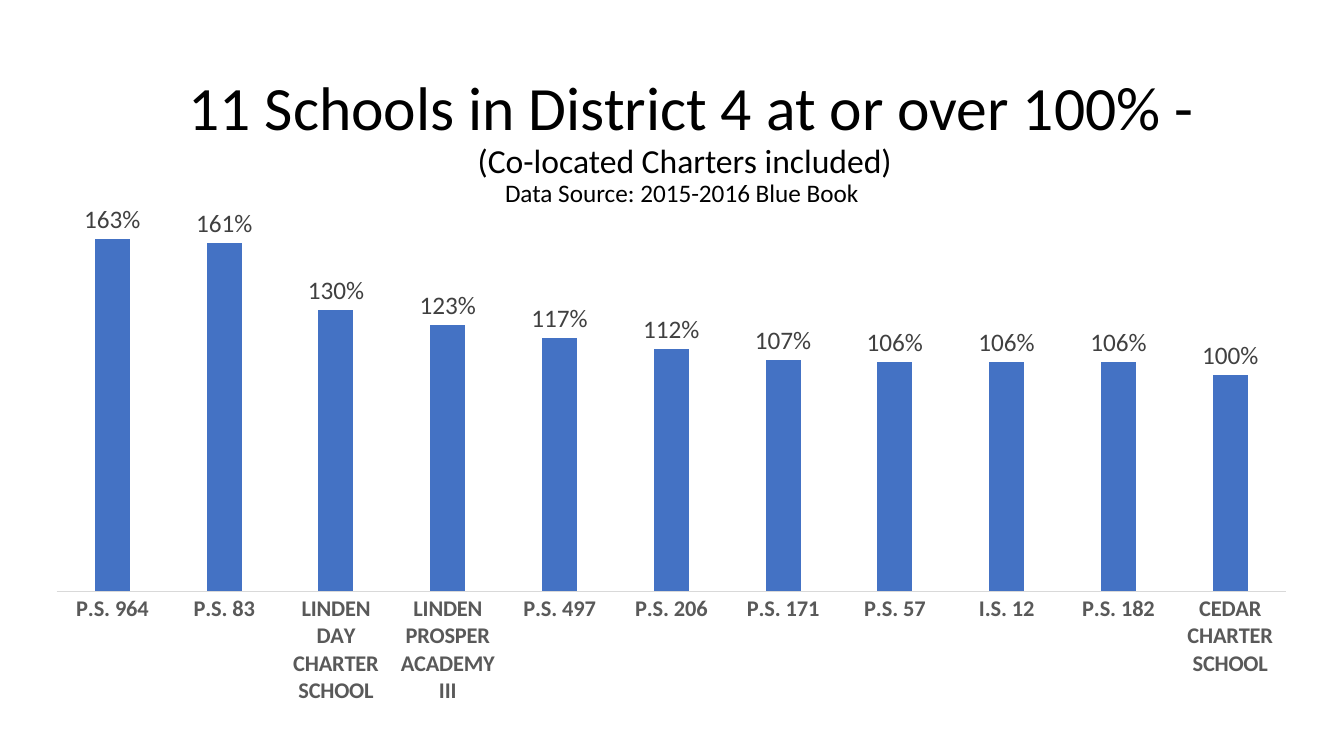
from pptx import Presentation
from pptx.chart.data import CategoryChartData
from pptx.dml.color import RGBColor
from pptx.enum.chart import XL_CHART_TYPE as ChartType
from pptx.enum.chart import XL_LABEL_POSITION as LabelPosition
from pptx.enum.chart import XL_TICK_MARK as TickMark
from pptx.enum.text import MSO_ANCHOR as Anchor
from pptx.enum.text import PP_ALIGN as Align
from pptx.util import Inches, Pt

SLIDE_WIDTH, SLIDE_HEIGHT = Inches(13.33), Inches(7.5)
FONT = "Calibri"
BLACK, BAR_BLUE = "000000", "4472C4"
LABEL_GREY, CATEGORY_GREY, AXIS_GREY = "404040", "595959", "D9D9D9"

HEADING = [
    (" 11 Schools in District 4 at or over 100% -", 44),
    ("(Co-located Charters included)", 24),
    ("Data Source: 2015-2016 Blue Book ", 18),
]
UTILIZATION = {
    "P.S. 964": 1.63,
    "P.S. 83": 1.61,
    "LINDEN DAY CHARTER SCHOOL": 1.3,
    "LINDEN PROSPER ACADEMY III": 1.23,
    "P.S. 497": 1.17,
    "P.S. 206": 1.12,
    "P.S. 171": 1.07,
    "P.S. 57": 1.06,
    "I.S. 12": 1.06,
    "P.S. 182": 1.06,
    "CEDAR CHARTER SCHOOL": 1,
}


def color(hex_value):
    return RGBColor.from_string(hex_value)


def area(left, top, width, height):
    """Turn percentages of the slide's size into lengths."""
    return (int(left * SLIDE_WIDTH / 100), int(top * SLIDE_HEIGHT / 100),
            int(width * SLIDE_WIDTH / 100), int(height * SLIDE_HEIGHT / 100))


def style_font(font, size, hex_value, bold=False):
    font.name = FONT
    font.size = Pt(size)
    font.bold = bold
    font.color.rgb = color(hex_value)


def add_heading(slide, lines, box):
    frame = slide.shapes.add_textbox(*box).text_frame
    frame.word_wrap = True
    frame.vertical_anchor = Anchor.MIDDLE
    paragraph = frame.paragraphs[0]
    paragraph.alignment = Align.CENTER
    paragraph.line_spacing = 0.9
    for index, (text, size) in enumerate(lines):
        if index:
            paragraph.add_line_break()
        run = paragraph.add_run()
        run.text = text
        style_font(run.font, size, BLACK)


def add_column_chart(slide, values, box):
    chart_data = CategoryChartData(number_format="0%")
    chart_data.categories = list(values)
    chart_data.add_series("Series 1", list(values.values()))
    chart = slide.shapes.add_chart(ChartType.COLUMN_CLUSTERED, *box, chart_data).chart
    chart.has_title = False
    chart.has_legend = False
    style_font(chart.font, 10, BLACK)

    schools = chart.category_axis
    schools.major_tick_mark = schools.minor_tick_mark = TickMark.NONE
    schools.format.line.color.rgb = color(AXIS_GREY)
    schools.format.line.width = Pt(0.75)
    style_font(schools.tick_labels.font, 16, CATEGORY_GREY, bold=True)

    percent = chart.value_axis
    percent.minimum_scale, percent.maximum_scale = 0, 1.8
    percent.has_major_gridlines = False
    percent.visible = False

    plot = chart.plots[0]
    plot.gap_width, plot.overlap = 219, -27
    plot.vary_by_categories = False
    bars = plot.series[0]
    bars.format.fill.solid()
    bars.format.fill.fore_color.rgb = color(BAR_BLUE)

    labels = bars.data_labels
    labels.show_value = True
    labels.position = LabelPosition.OUTSIDE_END
    labels.number_format = "0%"
    labels.number_format_is_linked = False
    style_font(labels.font, 18, LABEL_GREY)


def main():
    deck = Presentation()
    deck.slide_width, deck.slide_height = SLIDE_WIDTH, SLIDE_HEIGHT
    slide = deck.slides.add_slide(deck.slide_layouts[6])
    add_heading(slide, HEADING, area(7.8, 9.2, 86.3, 19.3))
    add_column_chart(slide, UTILIZATION, area(2.3, 25.3, 95.3, 69.3))
    deck.save("out.pptx")


if __name__ == "__main__":
    main()
